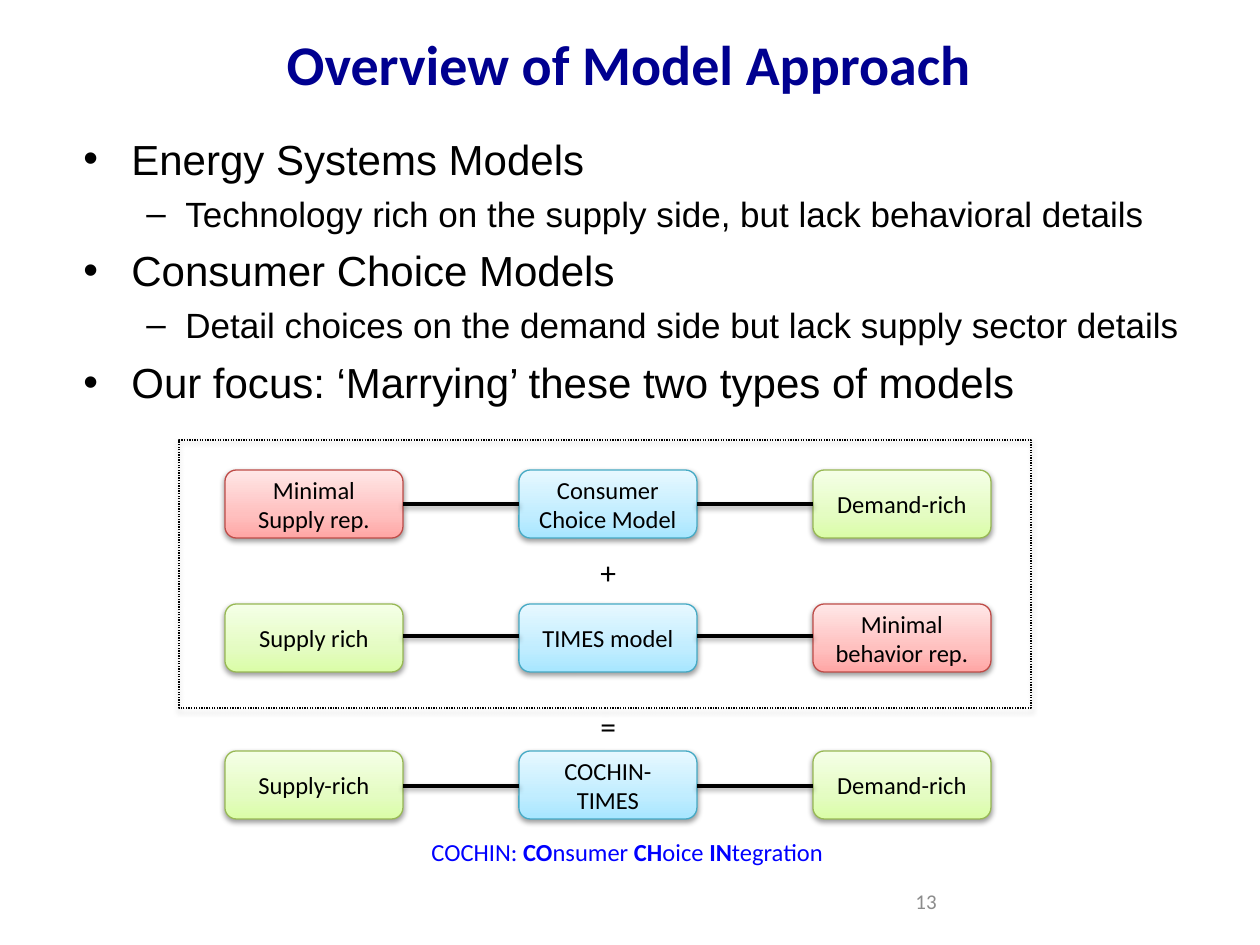
from dataclasses import dataclass

from lxml.etree import SubElement
from pptx import Presentation
from pptx.dml.color import RGBColor
from pptx.enum.dml import MSO_LINE
from pptx.enum.shapes import MSO_CONNECTOR, MSO_SHAPE
from pptx.enum.text import MSO_ANCHOR, PP_ALIGN
from pptx.oxml import parse_xml
from pptx.oxml.ns import nsdecls, qn
from pptx.util import Emu, Pt

PX_PER_INCH = 126


@dataclass(frozen=True)
class Theme:
    heading_font: str = "Calibri"
    body_font: str = "Arial"
    black: str = "000000"
    title: str = "000090"
    note: str = "0000FF"
    muted: str = "8C8C8C"
    title_size: int = 32
    topic_size: int = 24
    detail_size: int = 20
    sign_size: int = 18
    label_size: int = 14
    number_size: int = 12


THEME = Theme()

# Outline, then gradient from bottom to top
RICH = ("98B955", ("DAFDA7", "E4FCC2", "F5FFE7"))
MODEL = ("46AAC5", ("A7E6FF", "C1EDFF", "E7F8FF"))
MINIMAL = ("BF4C48", ("FFA6A5", "FFC0BF", "FFE7E7"))
GRADIENT_STOPS = (0, 35, 100)

BOX_LEFT, BOX_STEP, BOX_WIDTH, BOX_HEIGHT = 225, 294, 178, 68

# Top of the row, height of its links, boxes
MODEL_ROWS = [
    (470, 504, [("Minimal Supply rep.", MINIMAL), ("Consumer Choice Model", MODEL),
                ("Demand-rich", RICH)]),
    (604, 636, [("Supply rich", RICH), ("TIMES model", MODEL),
                ("Minimal behavior rep.", MINIMAL)]),
    (751, 786, [("Supply-rich", RICH), ("COCHIN-TIMES", MODEL),
                ("Demand-rich", RICH)]),
]

OUTLINE = [
    (0, "Energy Systems Models"),
    (1, "Technology rich on the supply side, but lack behavioral details"),
    (0, "Consumer Choice Models"),
    (1, "Detail choices on the demand side but lack supply sector details"),
    (0, "Our focus: ‘Marrying’ these two types of models"),
]

# Bullet, left margin, hanging indent, type size, space before in points
OUTLINE_LEVELS = [
    ("•", 48, 48, THEME.topic_size, 6),
    ("–", 102, 39, THEME.detail_size, 5),
]

ACRONYM = [("COCHIN: ", False), ("CO", True), ("nsumer ", False), ("CH", True),
           ("oice ", False), ("IN", True), ("tegration", False)]


def px(length):
    return Emu(round(length * 914400 / PX_PER_INCH))


def rgb(color):
    return RGBColor.from_string(color)


def write(paragraph, text, *, size, font=THEME.heading_font, color=THEME.black,
          bold=False, align=PP_ALIGN.LEFT):
    """Add text to a paragraph; text is a string or a list of (string, bold)."""
    paragraph.alignment = align
    for words, weight in [(text, bold)] if isinstance(text, str) else text:
        run = paragraph.add_run()
        run.text = words
        run.font.name = font
        run.font.size = Pt(size)
        run.font.bold = weight
        run.font.color.rgb = rgb(color)


def add_frame(slide, left, top, width, height, *, anchor=MSO_ANCHOR.TOP, wrap=True):
    area = slide.shapes.add_textbox(px(left), px(top), px(width), px(height))
    frame = area.text_frame
    frame.word_wrap = wrap
    frame.vertical_anchor = anchor
    return frame


def cast_shadow(shape, opacity=38, distance=20000):
    properties = shape._element.spPr
    for effects in properties.findall(qn("a:effectLst")):
        properties.remove(effects)
    properties.append(parse_xml(
        f'<a:effectLst {nsdecls("a")}><a:outerShdw blurRad="40000" dist="{distance}" '
        f'dir="5400000" rotWithShape="0"><a:srgbClr val="{THEME.black}">'
        f'<a:alpha val="{opacity * 1000}"/></a:srgbClr></a:outerShdw></a:effectLst>'))


def fill_upward(shape, colors):
    """Fill a shape with a gradient that starts at its bottom edge."""
    stops = "".join(
        f'<a:gs pos="{position * 1000}"><a:srgbClr val="{color}"/></a:gs>'
        for position, color in zip(GRADIENT_STOPS, colors))
    shape._element.spPr.find(qn("a:prstGeom")).addnext(parse_xml(
        f'<a:gradFill {nsdecls("a")} rotWithShape="1"><a:gsLst>{stops}</a:gsLst>'
        f'<a:lin ang="16200000" scaled="0"/></a:gradFill>'))


def add_model_box(slide, left, top, label, style):
    outline, gradient = style
    box = slide.shapes.add_shape(MSO_SHAPE.ROUNDED_RECTANGLE, px(left), px(top),
                                 px(BOX_WIDTH), px(BOX_HEIGHT))
    fill_upward(box, gradient)
    box.line.color.rgb = rgb(outline)
    box.line.width = Pt(0.75)
    cast_shadow(box)
    box.text_frame.word_wrap = True
    box.text_frame.vertical_anchor = MSO_ANCHOR.MIDDLE
    write(box.text_frame.paragraphs[0], label, size=THEME.label_size,
          align=PP_ALIGN.CENTER)


def add_link(slide, start, end, height):
    link = slide.shapes.add_connector(MSO_CONNECTOR.STRAIGHT, px(start), px(height),
                                      px(end), px(height))
    link.line.color.rgb = rgb(THEME.black)
    link.line.width = Pt(2)
    cast_shadow(link)


def add_model_row(slide, top, link_height, boxes):
    lefts = [BOX_LEFT + column * BOX_STEP for column in range(len(boxes))]
    for left, (label, style) in zip(lefts, boxes):
        add_model_box(slide, left, top, label, style)
    for left, following in zip(lefts, lefts[1:]):
        add_link(slide, left + BOX_WIDTH, following, link_height)


def add_dotted_frame(slide, left, top, width, height):
    border = slide.shapes.add_shape(MSO_SHAPE.RECTANGLE, px(left), px(top),
                                    px(width), px(height))
    border.fill.background()
    border.line.color.rgb = rgb(THEME.black)
    border.line.width = Pt(0.75)
    border.line.dash_style = MSO_LINE.ROUND_DOT
    cast_shadow(border, opacity=35, distance=23000)


def add_outline(slide):
    frame = add_frame(slide, 71, 123, 1134, 624)
    frame.margin_top = px(10)
    for index, (level, text) in enumerate(OUTLINE):
        bullet, margin, hanging, size, space = OUTLINE_LEVELS[level]
        paragraph = frame.add_paragraph() if index else frame.paragraphs[0]
        paragraph.level = level
        properties = paragraph._p.get_or_add_pPr()
        properties.set("marL", str(px(margin)))
        properties.set("indent", str(-px(hanging)))
        SubElement(properties, qn("a:buFont"), typeface=THEME.body_font)
        SubElement(properties, qn("a:buChar"), char=bullet)
        if index:
            paragraph.space_before = Pt(space)
        write(paragraph, text, size=size, font=THEME.body_font)


def main():
    deck = Presentation()
    deck.slide_width, deck.slide_height = px(1260), px(945)
    slide = deck.slides.add_slide(deck.slide_layouts[6])

    title = add_frame(slide, 62, 4, 1134, 118, anchor=MSO_ANCHOR.MIDDLE)
    write(title.paragraphs[0], "Overview of Model Approach", size=THEME.title_size,
          color=THEME.title, bold=True, align=PP_ALIGN.CENTER)
    page_number = add_frame(slide, 903, 876, 294, 50, anchor=MSO_ANCHOR.MIDDLE)
    write(page_number.paragraphs[0], "13", size=THEME.number_size, color=THEME.muted)
    add_outline(slide)

    for row in MODEL_ROWS:
        add_model_row(slide, *row)
    add_dotted_frame(slide, 179, 440, 852, 268)
    for sign, top in (("+", 547), ("=", 701)):
        operator = add_frame(slide, 588, top, 42, 50, wrap=False)
        write(operator.paragraphs[0], sign, size=THEME.sign_size)
    acronym = add_frame(slide, 419, 831, 420, 43, wrap=False)
    write(acronym.paragraphs[0], ACRONYM, size=THEME.label_size, color=THEME.note)

    deck.save("out.pptx")


if __name__ == "__main__":
    main()
